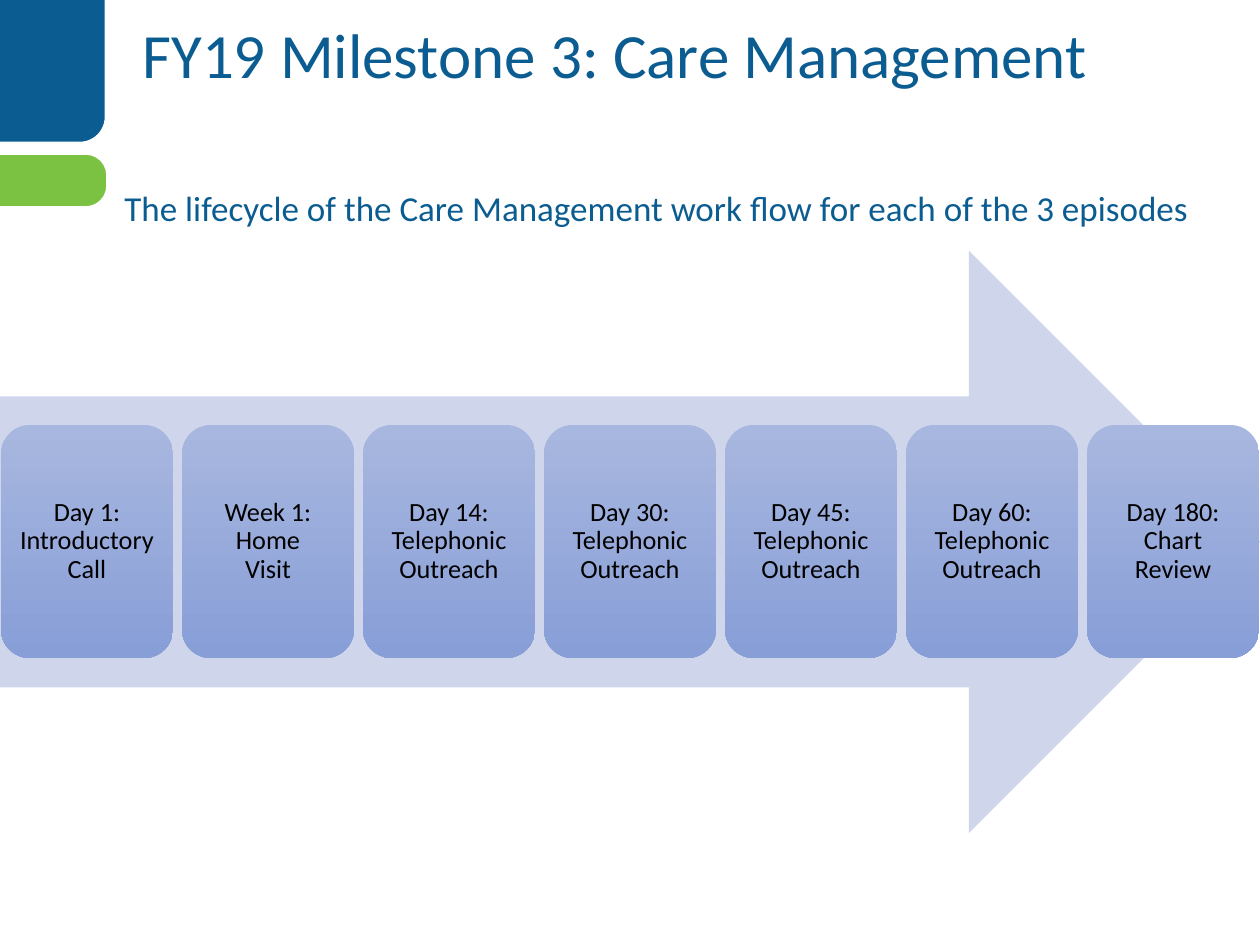
from pptx import Presentation
from pptx import util as u
from pptx.dml.color import RGBColor
from pptx.enum import shapes, text

BLUE, GREEN, WHITE, BLACK = "0B5C91", "7CC242", "FFFFFF", "000000"
ARROW_FILL = "CFD5EA"
CARD_GRADIENT = ("A8B7DF", "889ED7")
FONT = "Calibri"
STEPS = [
    "Day 1: Introductory Call",
    "Week 1:\vHome\vVisit",
    "Day 14: Telephonic Outreach",
    "Day 30: Telephonic Outreach",
    "Day 45: Telephonic Outreach",
    "Day 60: Telephonic Outreach",
    "Day 180: Chart Review",
]


def px(length):
    return u.Emu(round(length * 914400 / 126))


def color(value):
    return RGBColor.from_string(value)


def add_shape(slide, kind, left, top, width, height, fill=None):
    """Add a preset shape without shadow or outline."""
    shape = slide.shapes.add_shape(kind, px(left), px(top), px(width), px(height))
    shape.shadow.inherit = False
    shape.line.fill.background()
    if fill:
        shape.fill.solid()
        shape.fill.fore_color.rgb = color(fill)
    return shape


def add_tab(slide, left, top, width, height, fill, rotation, rounding):
    """Add a white-edged tab with two rounded corners."""
    tab = add_shape(slide, shapes.MSO_SHAPE.ROUND_2_SAME_RECTANGLE,
                    left, top, width, height, fill)
    tab.rotation = rotation
    tab.adjustments[0] = rounding
    tab.line.color.rgb = color(WHITE)
    tab.line.width = u.Pt(1.5)


def write(frame, wording, size, ink):
    frame.word_wrap = True
    frame.text = wording
    para = frame.paragraphs[0]
    para.font.name = FONT
    para.font.size = u.Pt(size)
    para.font.color.rgb = color(ink)
    return para


def add_text(slide, left, top, width, height, wording, size):
    box = slide.shapes.add_textbox(px(left), px(top), px(width), px(height))
    return write(box.text_frame, wording, size, BLUE)


def add_card(slide, left, wording):
    card = add_shape(slide, shapes.MSO_SHAPE.ROUNDED_RECTANGLE, left, 425, 172, 233)
    card.fill.gradient()
    card.fill.gradient_angle = 270
    for stop, shade in zip(card.fill.gradient_stops, CARD_GRADIENT):
        stop.color.rgb = color(shade)
    frame = card.text_frame
    frame.margin_left = frame.margin_right = px(8)
    frame.margin_top = frame.margin_bottom = px(8)
    frame.vertical_anchor = text.MSO_ANCHOR.MIDDLE
    para = write(frame, wording, 15, BLACK)
    para.alignment = text.PP_ALIGN.CENTER
    para.line_spacing = 0.9


def main():
    deck = Presentation()
    deck.slide_width, deck.slide_height = px(1260), px(945)
    slide = deck.slides.add_slide(deck.slide_layouts[6])

    add_tab(slide, -25, -2, 131, 145, BLUE, 180, 0.2)
    add_tab(slide, 15, 115, 54, 131, GREEN, 90, 0.4)
    title = add_text(slide, 130, 18, 1063, 103, "FY19 Milestone 3: Care Management", 36)
    title.line_spacing = 0.9

    add_shape(slide, shapes.MSO_SHAPE.RIGHT_ARROW, 0, 251, 1260, 582, ARROW_FILL)
    for index, step in enumerate(STEPS):
        add_card(slide, 1 + 181 * index, step)

    add_text(slide, 112, 180, 1113, 93,
             "The lifecycle of the Care Management work flow for each of the 3 episodes", 20)
    deck.save("out.pptx")


if __name__ == "__main__":
    main()
